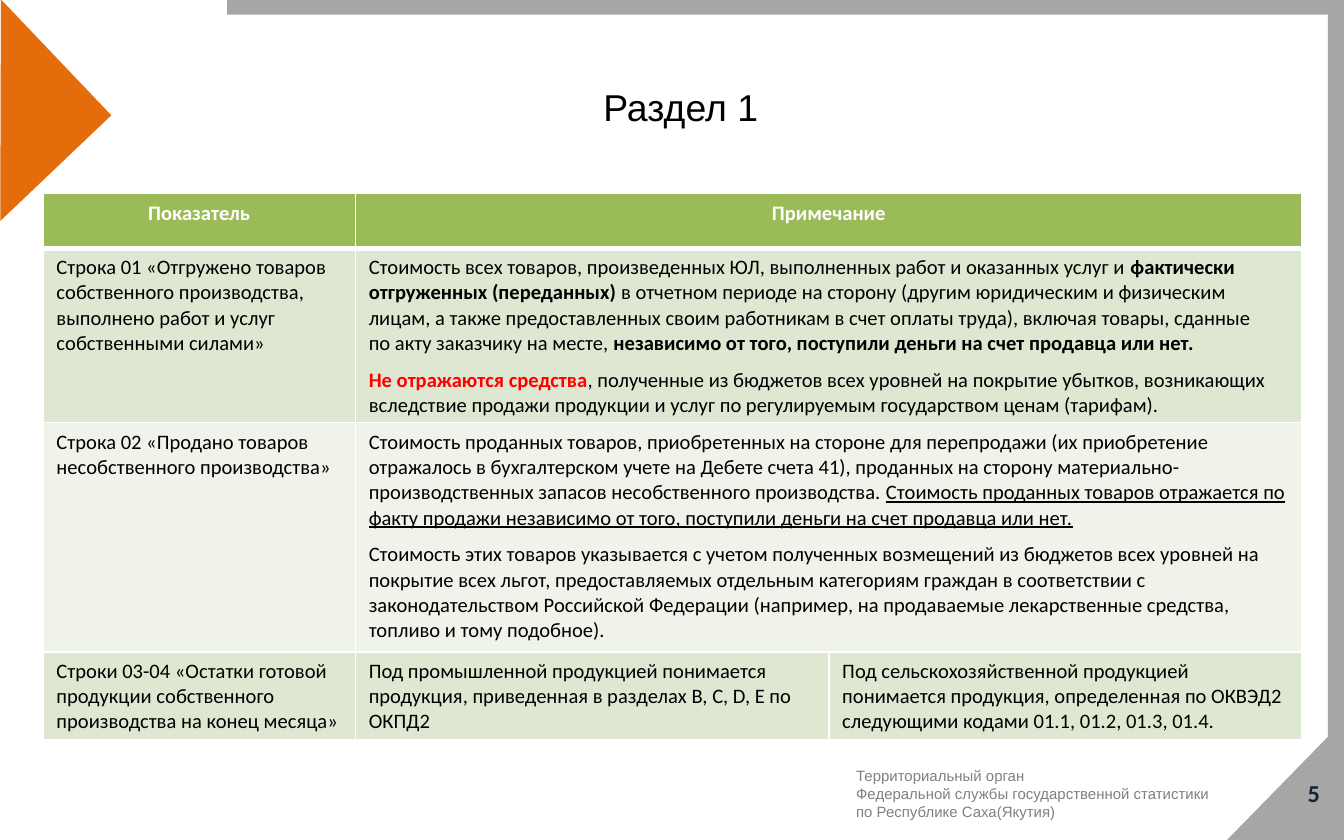
"""Builds the slide that explains the rows of section 1."""
from collections import namedtuple
from dataclasses import dataclass

from lxml import etree
from pptx import Presentation
from pptx import util as u
from pptx.dml.color import RGBColor
from pptx.enum import shapes, text
from pptx.oxml.ns import qn

Box = namedtuple("Box", "x y w h")
PAGE = Box(0, 0, 100, 62.5)
CELL = u.Inches(0.1)


@dataclass(frozen=True)
class Theme:
    """Colours, fonts and type sizes."""
    grey: str = "A6A6A6"
    orange: str = "E46C0A"
    green: str = "9BBB59"
    bands: tuple = ("DEE7D1", "EFF3EA")
    white: str = "FFFFFF"
    ink: str = "000000"
    red: str = "FF0000"
    note: str = "808080"
    navy: str = "0F243E"
    head_font: str = "Arial"
    body_font: str = "Calibri"
    title_size: int = 20
    body_size: int = 11
    note_size: int = 8
    number_size: int = 13


T = Theme()
BOLD = {"bold": True}
HEADER = ("Показатель", "Примечание")
ROWS = (
    ("Строка 01 «Отгружено товаров собственного производства, выполнено работ и услуг "
     "собственными силами»",
     [["Стоимость всех товаров, произведенных ЮЛ, выполненных работ и оказанных услуг и ",
       ("фактически отгруженных (переданных)", BOLD),
       " в отчетном периоде на сторону (другим юридическим и физическим лицам, а также "
       "предоставленных своим работникам в счет оплаты труда), включая товары, сданные"],
      ["по акту заказчику на месте, ",
       ("независимо от того, поступили деньги на счет продавца или нет.", BOLD)],
      [("Не отражаются средства", {"bold": True, "color": T.red}),
       ", полученные из бюджетов всех уровней на покрытие убытков, возникающих вследствие "
       "продажи продукции и услуг по регулируемым государством ценам (тарифам)."]]),
    ("Строка 02 «Продано товаров несобственного производства»",
     [["Стоимость проданных товаров, приобретенных на стороне для перепродажи (их "
       "приобретение отражалось в бухгалтерском учете на Дебете счета 41), проданных на "
       "сторону материально-производственных запасов несобственного производства. ",
       ("Стоимость проданных товаров отражается по факту продажи независимо от того, "
        "поступили деньги на счет продавца или нет.", {"underline": True})],
      ["Стоимость этих товаров указывается с учетом полученных возмещений из бюджетов всех "
       "уровней на покрытие всех льгот, предоставляемых отдельным категориям граждан в "
       "соответствии с законодательством Российской Федерации (например, на продаваемые "
       "лекарственные средства, топливо и тому подобное)."]]),
    ("Строки 03-04 «Остатки готовой продукции собственного производства на конец месяца»",
     "Под промышленной продукцией понимается продукция, приведенная в разделах B, C, D, E "
     "по ОКПД2",
     "Под сельскохозяйственной продукцией понимается продукция, определенная по ОКВЭД2 "
     "следующими кодами 01.1, 01.2, 01.3, 01.4."),
)
FOOTER = [["Территориальный орган"], ["Федеральной службы государственной статистики"],
          ["по Республике Саха(Якутия)"]]


def emu(box):
    """Turn grid units into slide lengths."""
    return [int(v * CELL) for v in box]


def inside(box, x, y, w, h):
    """Place a box relative to the corner of another one."""
    return Box(box.x + x, box.y + y, w, h)


def write(tf, content, align=text.PP_ALIGN.LEFT, gap=0, **fmt):
    """Fill a text frame; content is a string or paragraphs of runs, gap precedes the last."""
    paras = [[content]] if isinstance(content, str) else content
    for i, runs in enumerate(paras):
        p = tf.paragraphs[0] if i == 0 else tf.add_paragraph()
        p.alignment = align
        if gap and 0 < i == len(paras) - 1:
            p.space_before = u.Pt(gap)
        for run in runs:
            words, extra = (run, {}) if isinstance(run, str) else run
            look = {"font": T.body_font, "size": T.body_size, "color": T.ink,
                    "bold": False, "underline": False, **fmt, **extra}
            r = p.add_run()
            r.text = words
            r.font.name, r.font.size = look["font"], u.Pt(look["size"])
            r.font.bold, r.font.underline = look["bold"], look["underline"]
            r.font.color.rgb = RGBColor.from_string(look["color"])


def label(s, box, content, **fmt):
    """Add a wrapped text box centred on its height."""
    tf = s.shapes.add_textbox(*emu(box)).text_frame
    tf.word_wrap = True
    tf.vertical_anchor = text.MSO_ANCHOR.MIDDLE
    tf.margin_left = tf.margin_right = u.Inches(0.08)
    tf.margin_top = tf.margin_bottom = u.Inches(0.04)
    write(tf, content, **fmt)


def block(s, kind, box, color, turn=0):
    """Add a flat shape without outline."""
    sp = s.shapes.add_shape(kind, *emu(box))
    sp.shadow.inherit = False
    sp.rotation = turn
    sp.fill.solid()
    sp.fill.fore_color.rgb = RGBColor.from_string(color)
    sp.line.fill.background()


def frame(s, box):
    """Draw the grey edges and the two corner triangles."""
    kinds = shapes.MSO_SHAPE
    band, start = 1.2, 16.9
    block(s, kinds.RIGHT_TRIANGLE, inside(box, box.w - 8.8, box.h - 8.8, 8.9, 8.7), T.grey, 270)
    block(s, kinds.RECTANGLE, inside(box, box.w - band, 0, band, 55.5), T.grey)
    block(s, kinds.RECTANGLE, inside(box, start, 0, box.w - band - start, 1.1), T.grey)
    block(s, kinds.RIGHT_TRIANGLE, inside(box, -5.9, 2.5, 11.9, 11.4), T.orange, 226.4)


def paint(cell, color, top, bottom):
    """Fill a cell and give it white borders."""
    cell.fill.solid()
    cell.fill.fore_color.rgb = RGBColor.from_string(color)
    pr = cell._tc.get_or_add_tcPr()
    for i, (side, width) in enumerate(zip("LRTB", (1, 1, top, bottom))):
        ln = etree.Element(qn(f"a:ln{side}"), w=str(u.Pt(width)))
        fill = etree.SubElement(ln, qn("a:solidFill"))
        etree.SubElement(fill, qn("a:srgbClr"), val=T.white)
        pr.insert(i, ln)


def rows_table(s, box):
    """Draw the table of indicators and their notes."""
    lines = (HEADER, *ROWS)
    table = s.shapes.add_table(len(lines), 3, *emu(box)).table
    for col, share in zip(table.columns, (0.248, 0.376, 0.376)):
        col.width = int(box.w * share * CELL)
    for row, share in zip(table.rows, (0.1, 0.32, 0.42, 0.16)):
        row.height = int(box.h * share * CELL)
    for i, line in enumerate(lines):
        color = T.bands[(i - 1) % 2] if i else T.green
        for j in range(3):
            paint(table.cell(i, j), color, 3 if i == 1 else 1, 1 if i else 3)
        if len(line) == 2:
            table.cell(i, 1).merge(table.cell(i, 2))
        fmt = {} if i else {"align": text.PP_ALIGN.CENTER, "color": T.white, "bold": True}
        for j, content in enumerate(line):
            write(table.cell(i, j).text_frame, content, gap=6, **fmt)


def footer(s, box):
    """Write the name of the office and the slide number."""
    label(s, inside(box, 0, 0.6, box.w, 3.3), FOOTER,
          font=T.head_font, size=T.note_size, color=T.note)
    label(s, inside(box, 32, 0, 4.1, 4.4), "5", align=text.PP_ALIGN.RIGHT,
          size=T.number_size, color=T.navy, bold=True)


def main():
    """Build and save the slide."""
    prs = Presentation()
    prs.slide_width, prs.slide_height = emu(PAGE)[2:]
    s = prs.slides.add_slide(prs.slide_layouts[6])
    frame(s, PAGE)
    label(s, Box(8, 5.6, 85.3, 4.6), "Раздел 1", align=text.PP_ALIGN.CENTER,
          font=T.head_font, size=T.title_size)
    rows_table(s, Box(3.2, 14.4, 93.7, 40.6))
    footer(s, Box(62.9, 56.8, 37.1, 4.4))
    prs.save("out.pptx")


if __name__ == "__main__":
    main()
